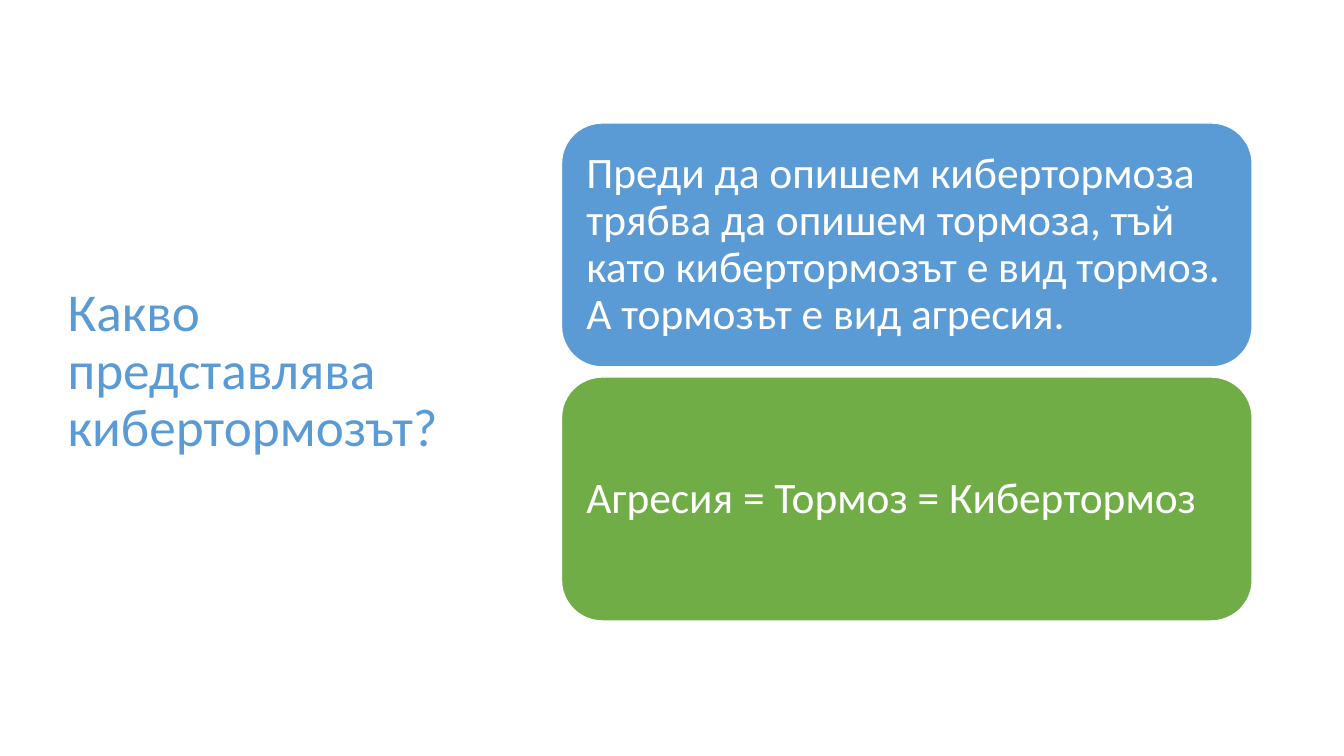
from dataclasses import dataclass

from pptx import Presentation
from pptx.dml.color import RGBColor as RGB
from pptx.enum.shapes import MSO_SHAPE as SHAPE
from pptx.enum.text import MSO_ANCHOR as ANCHOR, MSO_AUTO_SIZE as AUTO, PP_ALIGN as ALIGN
from pptx.util import Inches, Pt


@dataclass(frozen=True)
class Theme:
    font: str = "Calibri"
    blue: RGB = RGB(0x5B, 0x9B, 0xD5)
    green: RGB = RGB(0x70, 0xAD, 0x47)
    white: RGB = RGB(0xFF, 0xFF, 0xFF)
    title_size: int = 38
    card_size: int = 31
    spacing: float = 0.9


def apply(obj, values):
    for name, value in values.items():
        setattr(obj, name, value)


class Deck:
    def __init__(self, theme):
        self.theme = theme
        self.prs = Presentation()
        apply(self.prs, {"slide_width": Inches(13.33), "slide_height": Inches(7.5)})
        self.slide = self.prs.slides.add_slide(self.prs.slide_layouts[5])

    def box(self, left, top, width, height):
        w, h = self.prs.slide_width, self.prs.slide_height
        return [round(share * size / 100)
                for share, size in zip((left, top, width, height), (w, h, w, h))]

    def put_text(self, sp, text, size, color, inset):
        tf = sp.text_frame
        margins = ("margin_left", "margin_top", "margin_right", "margin_bottom")
        apply(tf, {"word_wrap": True, "auto_size": AUTO.NONE,
                   "vertical_anchor": ANCHOR.MIDDLE,
                   **dict.fromkeys(margins, Inches(inset))})
        p = tf.paragraphs[0]
        apply(p, {"alignment": ALIGN.LEFT, "line_spacing": self.theme.spacing})
        r = p.add_run()
        r.text = text
        apply(r.font, {"name": self.theme.font, "size": Pt(size)})
        r.font.color.rgb = color

    def title(self, text, *shares):
        sp = self.slide.shapes.title
        apply(sp, dict(zip(("left", "top", "width", "height"), self.box(*shares))))
        self.put_text(sp, text, self.theme.title_size, self.theme.blue, 0.1)

    def card(self, text, color, *shares):
        sp = self.slide.shapes.add_shape(SHAPE.ROUNDED_RECTANGLE, *self.box(*shares))
        sp.shadow.inherit = False
        sp.fill.solid()
        sp.fill.fore_color.rgb = color
        sp.line.color.rgb = self.theme.white
        sp.line.width = Pt(1)
        self.put_text(sp, text, self.theme.card_size, self.theme.white, 0.13)


def main():
    theme = Theme()
    deck = Deck(theme)
    deck.title("Какво представлява кибертормозът?", 4.28, 9.07, 31.2, 80.27)
    cards = [
        ("Преди да опишем кибертормоза трябва да опишем тормоза, тъй като "
         "кибертормозът е вид тормоз. А тормозът е вид агресия.", theme.blue),
        ("Агресия = Тормоз = Кибертормоз", theme.green),
    ]
    top, height, gap = 16.27, 32.27, 1.33
    for i, (text, color) in enumerate(cards):
        deck.card(text, color, 41.78, top + i * (height + gap), 51.39, height)
    deck.prs.save("out.pptx")


if __name__ == "__main__":
    main()
